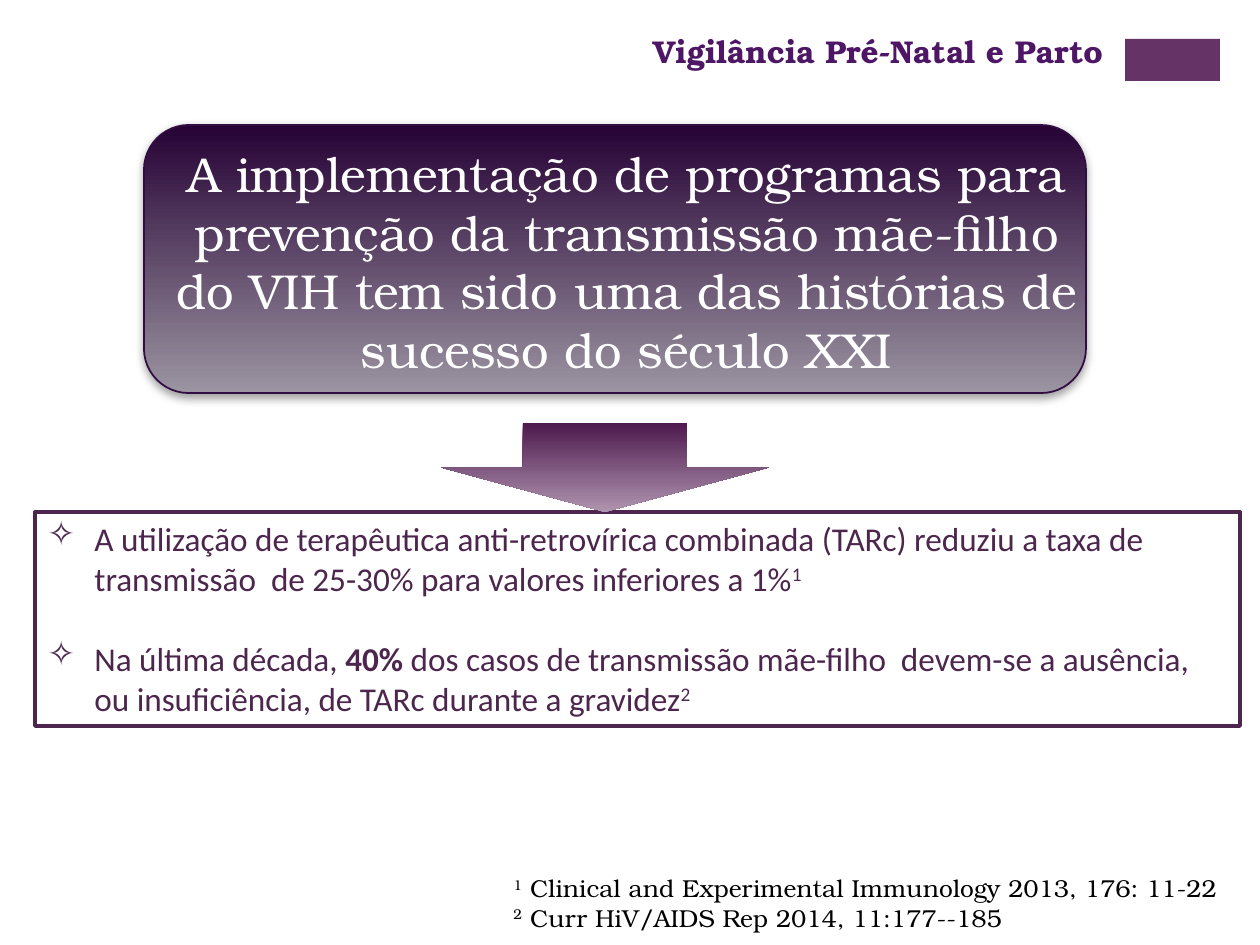
from dataclasses import dataclass
from typing import NamedTuple

from lxml.etree import SubElement
from pptx import Presentation
from pptx.dml.color import RGBColor
from pptx.enum.shapes import MSO_SHAPE as Kind
from pptx.enum.text import MSO_ANCHOR as Anchor, MSO_AUTO_SIZE as Fit, PP_ALIGN as Align
from pptx.oxml.ns import qn
from pptx.util import Emu, Pt

SCALE = 914400 / 126
WHITE = RGBColor(0xFF, 0xFF, 0xFF)
BLACK = RGBColor(0, 0, 0)
PLUM = RGBColor(0x66, 0x33, 0x66)
DARK = RGBColor(0x4D, 0x26, 0x4D)
TITLE = RGBColor(0x4E, 0x17, 0x65)
EDGE = RGBColor(0x32, 0x0D, 0x42)
NIGHT = RGBColor(0x26, 0x02, 0x35)
ASH = RGBColor(0x9B, 0x94, 0xA1)
GRAPE = RGBColor(0x4D, 0x1A, 0x4D)
MAUVE = RGBColor(0xAF, 0x94, 0xAF)
SERIF = "TeX Gyre Bonum"
SANS = "Calibri"
SIGNS = "OpenSymbol"


class Box(NamedTuple):
    left: int
    top: int
    width: int
    height: int


class Part(NamedTuple):
    text: str
    bold: bool = False
    high: bool = False


@dataclass
class Style:
    face: str
    size: int
    ink: RGBColor
    align: Align = Align.LEFT
    bold: bool = False
    mark: str = ""
    gap: int = 0


@dataclass
class Form:
    kind: Kind
    box: Box
    fill: tuple[RGBColor, ...] = ()
    line: RGBColor | None = None
    thick: float = 1
    glow: bool = False


def px(size: int) -> Emu:
    return Emu(round(size * SCALE))


def place(box: Box) -> list[Emu]:
    return [px(side) for side in box]


def apply(target, values: dict) -> None:
    for name, value in values.items():
        setattr(target, name, value)


def shade(shape) -> None:
    cast = SubElement(shape._element.spPr.find(qn("a:effectLst")), qn("a:outerShdw"),
                      blurRad=str(Pt(5)), dist=str(Pt(2)), dir="5400000", rotWithShape="0")
    tone = SubElement(cast, qn("a:srgbClr"), val="808080")
    SubElement(tone, qn("a:alpha"), val="75000")


def draw(slide, form: Form):
    shape = slide.shapes.add_shape(form.kind, *place(form.box))
    shape.shadow.inherit = False
    if len(form.fill) > 1:
        shape.fill.gradient()
        shape.fill.gradient_angle = 270
        for stop, tone, spot in zip(shape.fill.gradient_stops, form.fill, (0, 1)):
            stop.color.rgb, stop.position = tone, spot
    elif form.fill:
        shape.fill.solid()
        shape.fill.fore_color.rgb = form.fill[0]
    else:
        shape.fill.background()
    if form.line is None:
        shape.line.fill.background()
    else:
        shape.line.color.rgb = form.line
        shape.line.width = Pt(form.thick)
    if form.glow:
        shade(shape)
    return shape


def mark(para, sign: str) -> None:
    props = para._p.get_or_add_pPr()
    props.set("marL", str(px(47)))
    props.set("indent", str(-px(47)))
    SubElement(props, qn("a:buFont"), typeface=SIGNS)
    SubElement(props, qn("a:buChar"), char=sign)


def write(shape, rows: list[list[Part]], style: Style) -> None:
    frame = shape.text_frame
    apply(frame, {"word_wrap": True, "auto_size": Fit.SHAPE_TO_FIT_TEXT,
                  "vertical_anchor": Anchor.TOP})
    for index, row in enumerate(rows):
        para = frame.add_paragraph() if index else frame.paragraphs[0]
        para.alignment = style.align
        if index and style.gap:
            para.space_before = Pt(style.gap)
        if style.mark:
            mark(para, style.mark)
        for part in row:
            run = para.add_run()
            run.text = part.text
            apply(run.font, {"name": style.face, "size": Pt(style.size),
                             "bold": style.bold or part.bold})
            run.font.color.rgb = style.ink
            if part.high:
                run._r.get_or_add_rPr().set("baseline", "30000")


def label(slide, box: Box, rows: list[list[Part]], style: Style) -> None:
    write(slide.shapes.add_textbox(*place(box)), rows, style)


def main() -> None:
    deck = Presentation()
    apply(deck, {"slide_width": px(1260), "slide_height": px(945)})
    slide = deck.slides.add_slide(deck.slide_layouts[6])

    draw(slide, Form(Kind.RECTANGLE, Box(1125, 39, 95, 42), (PLUM,)))
    draw(slide, Form(Kind.ROUNDED_RECTANGLE, Box(144, 125, 942, 268), (NIGHT, ASH), EDGE, glow=True))
    label(slide, Box(157, 137, 939, 251),
          [[Part("A implementação de programas para prevenção da transmissão mãe-filho "
                 "do VIH tem sido uma das histórias de sucesso do século XXI")]],
          Style(SERIF, 28, WHITE, Align.CENTER))
    label(slide, Box(501, 867, 754, 72),
          [[Part("1", high=True), Part(" Clinical and Experimental Immunology 2013, 176: 11-22")],
           [Part("2", high=True), Part(" Curr HiV/AIDS Rep 2014, 11:177--185")]],
          Style(SERIF, 14, BLACK))
    facts = draw(slide, Form(Kind.RECTANGLE, Box(35, 512, 1205, 214), line=DARK, thick=2.25))
    write(facts,
          [[Part("A utilização de terapêutica anti-retrovírica combinada (TARc) reduziu a taxa de "
                 "transmissão  de 25-30% para valores inferiores a 1%"), Part("1", high=True)],
           [Part("Na última década, "), Part("40% ", bold=True),
            Part("dos casos de transmissão mãe-filho  devem-se a ausência, ou insuficiência, "
                 "de TARc durante a gravidez"), Part("2", high=True)]],
          Style(SANS, 19, DARK, mark="✧", gap=23))
    draw(slide, Form(Kind.DOWN_ARROW, Box(441, 423, 328, 89), (GRAPE, MAUVE)))
    label(slide, Box(253, 26, 873, 50), [[Part("Vigilância Pré-Natal e Parto ")]],
          Style(SERIF, 18, TITLE, Align.RIGHT, bold=True))

    deck.save("out.pptx")


if __name__ == "__main__":
    main()
